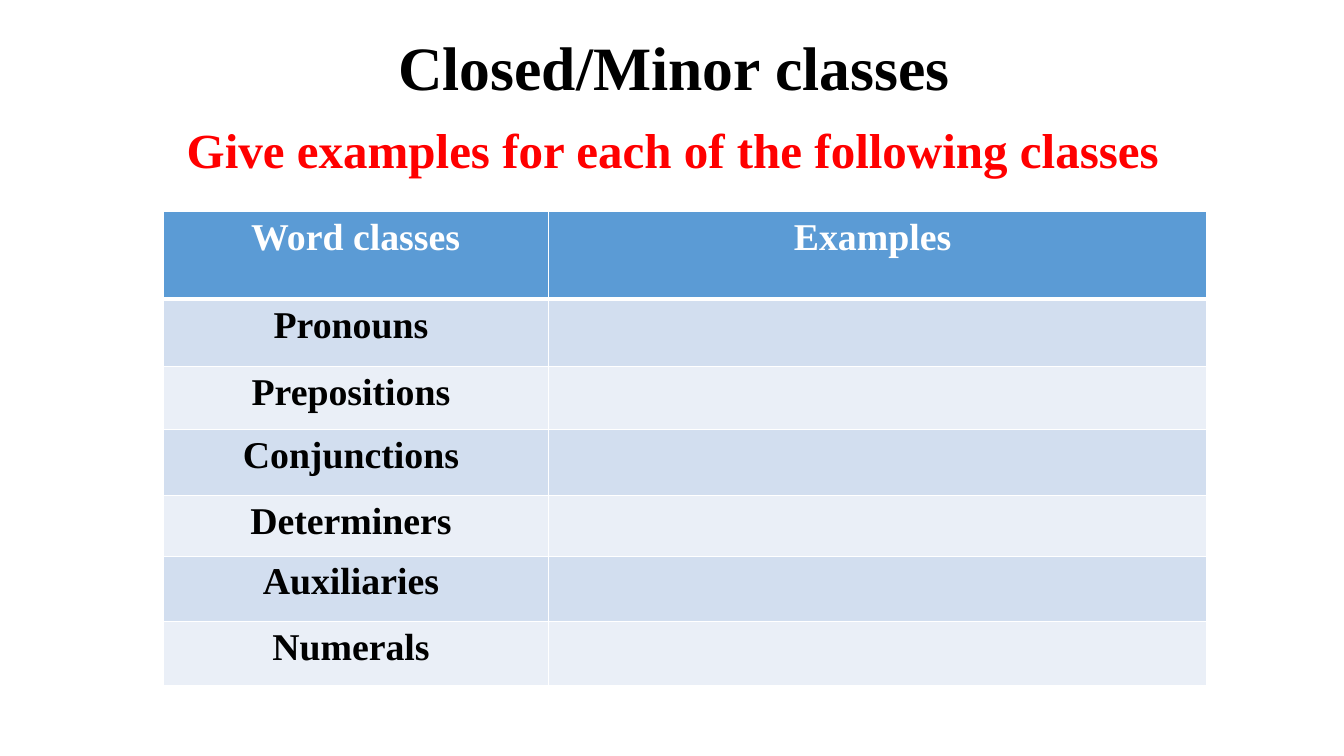
from lxml import etree
from pptx import Presentation
from pptx.dml.color import RGBColor
from pptx.enum import text as t
from pptx.oxml import ns
from pptx.util import Pt

BLACK = RGBColor(0x00, 0x00, 0x00)
WHITE = RGBColor(0xFF, 0xFF, 0xFF)
RED = RGBColor(0xFF, 0x00, 0x00)
HEADER_BLUE = RGBColor(0x5B, 0x9B, 0xD5)
BANDS = (RGBColor(0xD2, 0xDE, 0xEF), RGBColor(0xEA, 0xEF, 0xF7))

WORD_CLASSES = ("Pronouns ", "Prepositions ", "Conjunctions ",
                "Determiners ", "Auxiliaries ", "Numerals ")
COLUMN_WIDTHS = (275, 470.2)
ROW_HEIGHTS = (62.6, 48.2, 44.6, 47.5, 43.2, 46.8, 45.4)


def write(frame, content, *, font, size, color, spacing=1.0):
    paragraph = frame.paragraphs[0]
    paragraph.alignment = t.PP_ALIGN.CENTER
    paragraph.line_spacing = spacing
    run = paragraph.add_run()
    run.text = content
    run.font.name = font
    run.font.size = Pt(size)
    run.font.bold = True
    run.font.color.rgb = color


class SlideBuilder:
    font = "Times New Roman"
    cell_size = 27

    def __init__(self, slide):
        self.slide = slide

    def heading(self, content, left, top, width, height, **style):
        shape = self.slide.shapes.add_textbox(Pt(left), Pt(top), Pt(width), Pt(height))
        frame = shape.text_frame
        frame.word_wrap = True
        frame.vertical_anchor = t.MSO_ANCHOR.MIDDLE
        write(frame, content, font=self.font, **style)

    def borders(self, cell, bottom):
        properties = cell._tc.get_or_add_tcPr()
        widths = {"L": 1, "R": 1, "T": 1, "B": bottom}
        for index, (side, width) in enumerate(widths.items()):
            line = etree.Element(ns.qn(f"a:ln{side}"), w=str(Pt(width)))
            fill = etree.SubElement(line, ns.qn("a:solidFill"))
            etree.SubElement(fill, ns.qn("a:srgbClr"), val=str(WHITE))
            properties.insert(index, line)

    def cell(self, cell, content, fill, color, bottom):
        cell.fill.solid()
        cell.fill.fore_color.rgb = fill
        self.borders(cell, bottom)
        if content:
            write(cell.text_frame, content, font=self.font,
                  size=self.cell_size, color=color)

    def table(self, rows, left, top, widths, heights):
        frame = self.slide.shapes.add_table(
            len(rows), len(widths), Pt(left), Pt(top), Pt(sum(widths)), Pt(sum(heights)))
        table = frame.table
        for column, width in zip(table.columns, widths):
            column.width = Pt(width)
        for index, (row, height) in enumerate(zip(rows, heights)):
            table.rows[index].height = Pt(height)
            header = index == 0
            fill = HEADER_BLUE if header else BANDS[(index - 1) % 2]
            for column, content in enumerate(row):
                self.cell(table.cell(index, column), content, fill,
                          WHITE if header else BLACK, 3 if header else 1)


def main():
    presentation = Presentation()
    presentation.slide_width = Pt(960)
    presentation.slide_height = Pt(540)
    builder = SlideBuilder(presentation.slides.add_slide(presentation.slide_layouts[6]))
    builder.heading("Closed/Minor classes", 67.7, 19.4, 828, 62.6,
                    size=44, color=BLACK, spacing=0.9)
    rows = [("Word classes", "Examples ")] + [(name, "") for name in WORD_CLASSES]
    builder.table(rows, 116.6, 151.2, COLUMN_WIDTHS, ROW_HEIGHTS)
    builder.heading("Give examples for each of the following classes",
                    87.1, 87.8, 787.7, 37.4, size=35, color=RED)
    presentation.save("out.pptx")


if __name__ == "__main__":
    main()
